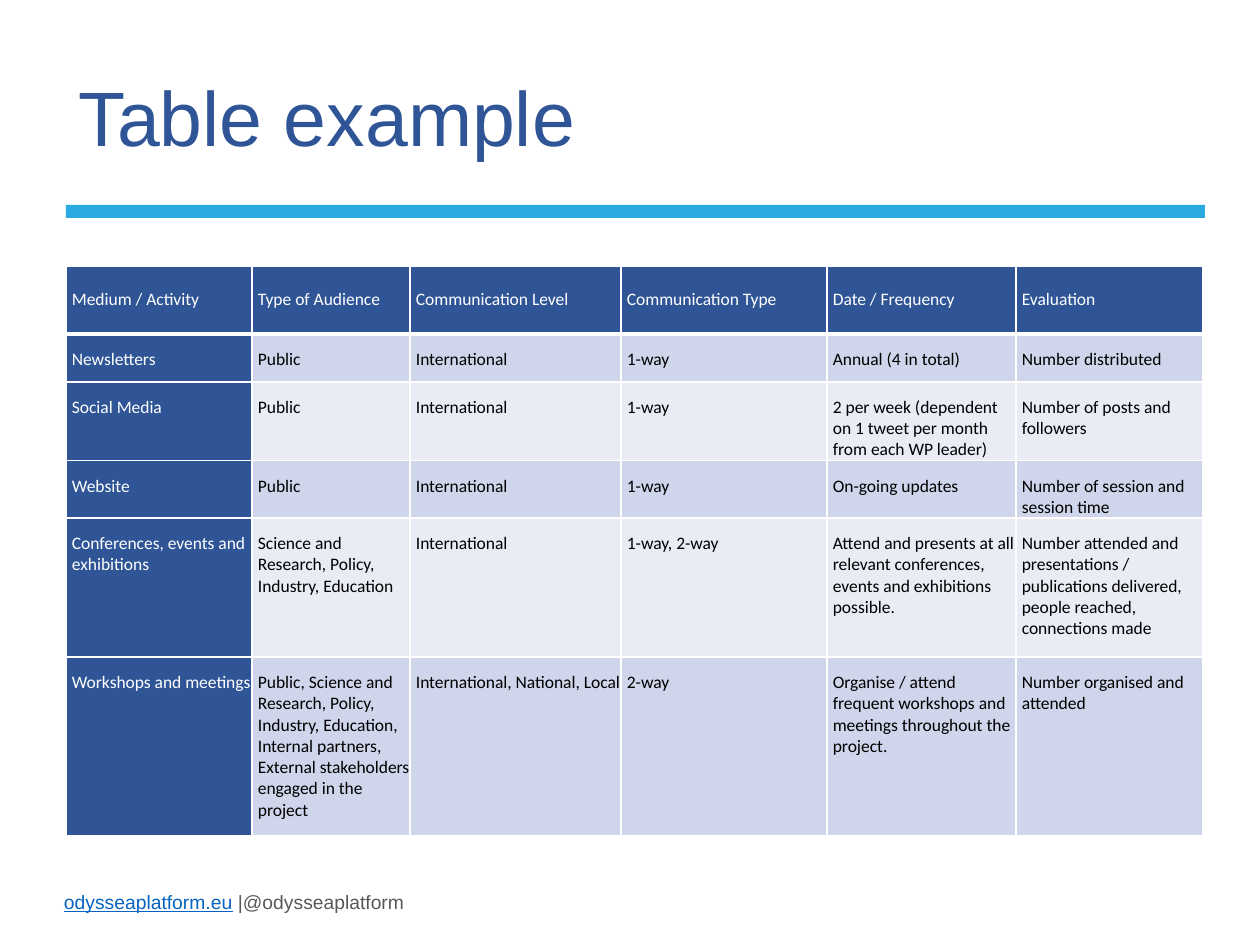
from lxml import etree
from pptx import Presentation
from pptx import util as u
from pptx.dml import color
from pptx.enum import shapes, text
from pptx.oxml import ns

NAVY, WHITE, BLACK = "2F5597", "FFFFFF", "000000"
BANDS = ("CFD5EA", "E9EBF5")
COLUMN_WIDTHS = (186, 158, 211, 206, 189, 187)
ROW_HEIGHTS = (68, 48, 72, 44, 139, 179)
ACTIVITIES = (
    ("Medium / Activity", "Type of Audience", "Communication Level",
     "Communication Type", "Date / Frequency", "Evaluation"),
    ("Newsletters", "Public", "International", "1-way",
     "Annual (4 in total)", "Number distributed"),
    ("Social Media", "Public", "International", "1-way",
     "2 per week (dependent on 1 tweet per month from each WP leader)",
     "Number of posts and followers"),
    ("Website", "Public", "International", "1-way",
     "On-going updates", "Number of session and session time"),
    ("Conferences, events and exhibitions",
     "Science and Research, Policy, Industry, Education",
     "International", "1-way, 2-way",
     "Attend and presents at all relevant conferences, events and "
     "exhibitions possible.",
     "Number attended and presentations / publications delivered, "
     "people reached, connections made"),
    ("Workshops and meetings",
     "Public, Science and Research, Policy, Industry, Education, "
     "Internal partners, External stakeholders engaged in the project",
     "International, National, Local", "2-way",
     "Organise / attend frequent workshops and meetings throughout "
     "the project.",
     "Number organised and attended"),
)


def px(length):
    return u.Inches(length / 126)


def rgb(value):
    return color.RGBColor.from_string(value)


def set_font(font, name, size, value):
    font.name = name
    font.size = u.Pt(size)
    font.color.rgb = rgb(value)


def add_heading(page, left, top, width, height):
    """Title with the rule below it; the box covers both."""
    title = page.shapes.title
    title.left, title.top = px(left), px(top)
    title.width, title.height = px(951), px(144)
    frame = title.text_frame
    frame.text = "Table example"
    frame.auto_size = text.MSO_AUTO_SIZE.NONE
    frame.vertical_anchor = text.MSO_ANCHOR.MIDDLE
    para = frame.paragraphs[0]
    para.alignment = text.PP_ALIGN.LEFT
    para.line_spacing = 0.9
    set_font(para.font, "Arial", 44, NAVY)

    thickness = 13
    rule = page.shapes.add_shape(
        shapes.MSO_SHAPE.RECTANGLE, px(left), px(top + height - thickness),
        px(width), px(thickness))
    rule.shadow.inherit = False
    rule.fill.solid()
    rule.fill.fore_color.rgb = rgb("2BAAE2")
    rule.line.fill.background()


def set_borders(cell, widths):
    """White borders, with widths in points for left, right, top, bottom."""
    properties = cell._tc.get_or_add_tcPr()
    for index, (side, width) in enumerate(zip("LRTB", widths)):
        line = etree.Element(ns.qn(f"a:ln{side}"), w=str(u.Pt(width)))
        fill = etree.SubElement(line, ns.qn("a:solidFill"))
        etree.SubElement(fill, ns.qn("a:srgbClr"), val=WHITE)
        properties.insert(index, line)


def format_cell(cell, row, column):
    is_header = row == 0
    is_dark = is_header or column == 0
    set_borders(cell, (1, 1, 3 if row == 1 else 1, 3 if is_header else 1))
    cell.fill.solid()
    cell.fill.fore_color.rgb = rgb(NAVY if is_dark else BANDS[(row - 1) % 2])
    cell.margin_left = px(6)
    cell.margin_right = cell.margin_bottom = 0
    cell.margin_top = 0 if is_header else px(15)
    cell.vertical_anchor = (
        text.MSO_ANCHOR.MIDDLE if is_header else text.MSO_ANCHOR.TOP)
    font = cell.text_frame.paragraphs[0].font
    set_font(font, "Calibri", 10, WHITE if is_dark else BLACK)
    font.bold = False


def add_activity_table(page, left, top):
    table = page.shapes.add_table(
        len(ROW_HEIGHTS), len(COLUMN_WIDTHS), px(left), px(top),
        px(sum(COLUMN_WIDTHS)), px(sum(ROW_HEIGHTS))).table
    table.horz_banding = False
    for column, width in zip(table.columns, COLUMN_WIDTHS):
        column.width = px(width)
    for row, height in zip(table.rows, ROW_HEIGHTS):
        row.height = px(height)
    for row, entries in enumerate(ACTIVITIES):
        for column, entry in enumerate(entries):
            cell = table.cell(row, column)
            cell.text = entry
            format_cell(cell, row, column)


def add_footer(page, left, top, width, height):
    box = page.shapes.add_textbox(px(left), px(top), px(width), px(height))
    frame = box.text_frame
    frame.word_wrap = True
    frame.vertical_anchor = text.MSO_ANCHOR.MIDDLE
    frame.margin_left = frame.margin_right = 0
    frame.margin_top = frame.margin_bottom = 0
    para = frame.paragraphs[0]
    set_font(para.font, "Arial", 11, "565859")
    address = para.add_run()
    address.text = "odysseaplatform.eu"
    address.font.underline = True
    address.font.color.rgb = rgb("0563C1")
    para.add_run().text = " |@odysseaplatform"


def main():
    deck = Presentation()
    deck.slide_width, deck.slide_height = px(1260), px(945)
    page = deck.slides.add_slide(deck.slide_layouts[5])
    add_heading(page, 66, 50, 1139, 168)
    add_activity_table(page, 66, 266)
    add_footer(page, 64, 890, 601, 24)
    deck.save("out.pptx")


if __name__ == "__main__":
    main()
